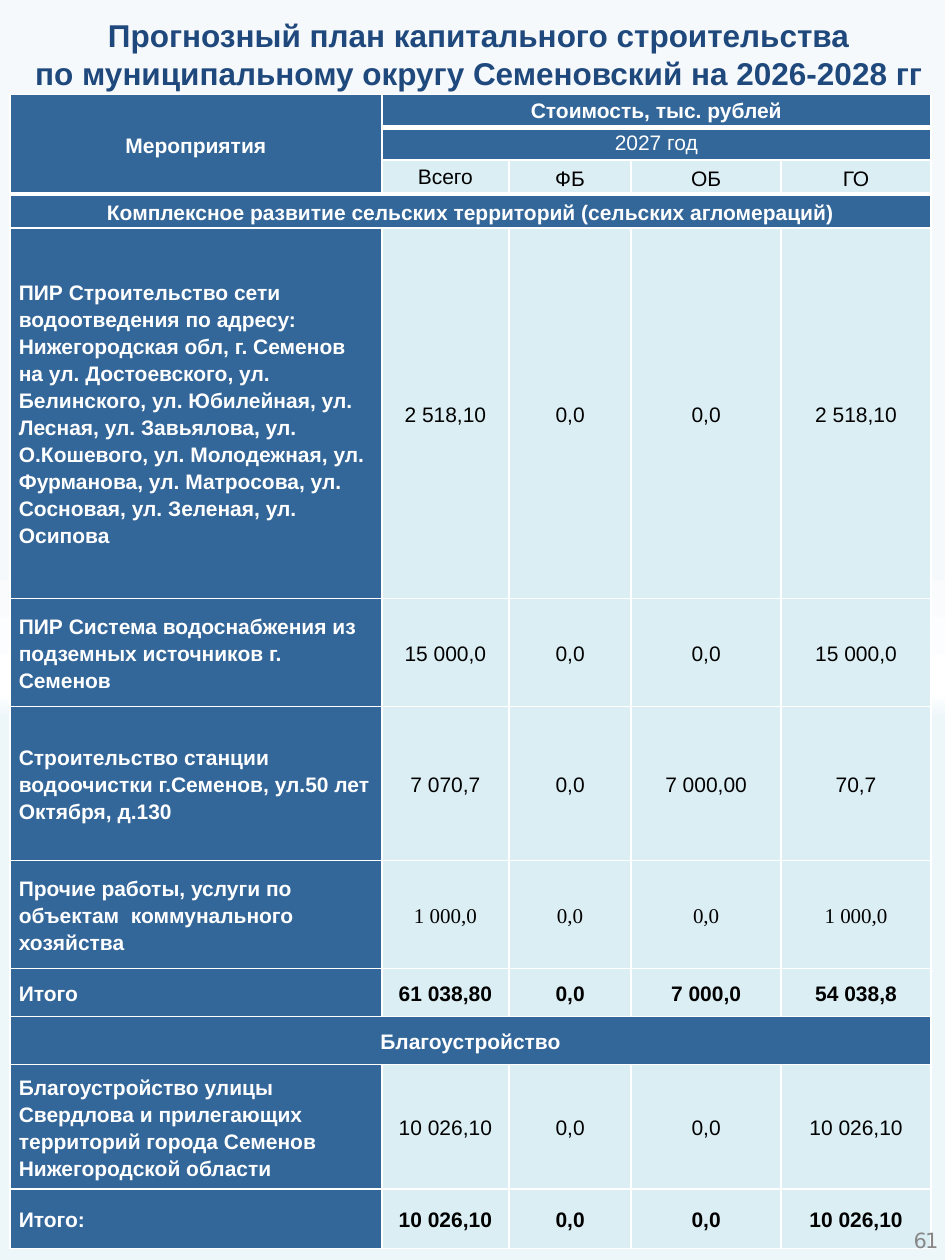
from lxml import etree
from pptx import Presentation
from pptx.dml.color import RGBColor
from pptx.enum.text import MSO_ANCHOR, PP_ALIGN
from pptx.oxml.ns import qn
from pptx.util import Inches, Pt

LEFT, CENTER = PP_ALIGN.LEFT, PP_ALIGN.CENTER
MIDDLE = MSO_ANCHOR.MIDDLE

COLORS = {
    "blue": "336699", "pale": "DBEEF4", "white": "FFFFFF",
    "black": "000000", "title": "1F497D", "number": "888888",
}
BACKGROUND_STOPS = [(21, "F6F9FC"), (43, "F6F9FC"), (55, "FFFFFF"),
                    (57, "EDF6F9"), (63, "EDF6F9"), (95, "EDF6F9")]

TITLE = ["Прогнозный план капитального строительства",
         "по муниципальному округу Семеновский на 2026-2028 гг"]
COLUMN_WIDTHS = [2.95, 1.01, 0.97, 1.19, 1.19]
ROW_HEIGHTS = [0.26, 0.26, 0.27, 0.27, 2.94, 0.86,
               1.22, 0.86, 0.38, 0.38, 0.99, 0.47]
THICK_BELOW = (0, 2)  # header rows closed by a heavy line
SOURCES = ["Всего", "ФБ", "ОБ", "ГО"]
SECTIONS = {3: "Комплексное развитие сельских территорий (сельских агломераций)",
            9: "Благоустройство"}
TOTAL_ROWS = (8, 11)
SERIF_ROW = 7
WORKS = {
    4: ["ПИР Строительство сети водоотведения по адресу: Нижегородская обл, "
        "г. Семенов на ул. Достоевского, ул. Белинского, ул. Юбилейная, "
        "ул. Лесная, ул. Завьялова, ул. О.Кошевого, ул. Молодежная, "
        "ул. Фурманова, ул. Матросова, ул. Сосновая, ул. Зеленая, ул. Осипова",
        "2 518,10", "0,0", "0,0", "2 518,10"],
    5: ["ПИР Система водоснабжения из подземных источников г. Семенов",
        "15 000,0", "0,0", "0,0", "15 000,0"],
    6: ["Строительство станции водоочистки г.Семенов, ул.50 лет Октября, д.130",
        "7 070,7", "0,0", "7 000,00", "70,7"],
    7: ["Прочие работы, услуги по объектам  коммунального хозяйства",
        "1 000,0", "0,0", "0,0", "1 000,0"],
    8: ["Итого", "61 038,80", "0,0", "7 000,0", "54 038,8"],
    10: ["Благоустройство улицы Свердлова и прилегающих территорий "
         "города Семенов Нижегородской области",
         "10 026,10", "0,0", "0,0", "10 026,10"],
    11: ["Итого:", "10 026,10", "0,0", "0,0", "10 026,10"],
}


def rgb(name):
    return RGBColor.from_string(COLORS[name])


def style_font(para, size, color, bold=False, name="Arial"):
    font = para.font
    font.name, font.size, font.bold = name, Pt(size), bold
    font.color.rgb = rgb(color)


def paint_background(page):
    fill = page.background.fill
    fill.gradient()
    fill.gradient_angle = 270
    stops = page._element.find(".//" + qn("a:gsLst"))
    for stop in list(stops):
        stops.remove(stop)
    for percent, color in BACKGROUND_STOPS:
        stop = etree.SubElement(stops, qn("a:gs"), pos=str(percent * 1000))
        etree.SubElement(stop, qn("a:srgbClr"), val=color)


def add_text_box(page, left, top, width, height):
    box = page.shapes.add_textbox(Inches(left), Inches(top),
                                  Inches(width), Inches(height))
    box.text_frame.word_wrap = True
    return box


def add_title(page):
    frame = add_text_box(page, -0.39, 0.08, 7.89, 0.71).text_frame
    for index, line in enumerate(TITLE):
        para = frame.paragraphs[0] if index == 0 else frame.add_paragraph()
        para.text = line
        para.alignment = CENTER
        para._p.get_or_add_pPr().set("indent", str(Inches(0.49)))
        style_font(para, 18, "title", bold=True)


def add_page_number(page):
    frame = add_text_box(page, 7.25, 9.74, 0.25, 0.23).text_frame
    frame.margin_left = frame.margin_right = 0
    frame.margin_top = frame.margin_bottom = 0
    para = frame.paragraphs[0]
    span = para.add_run()
    span.text = "61"
    span._r.get_or_add_rPr().set("spc", "-100")
    style_font(para, 12, "number", name="DejaVu Sans")


def set_borders(cell, row):
    widths = {"L": 1, "R": 1,
              "T": 3 if row - 1 in THICK_BELOW else 1,
              "B": 3 if row in THICK_BELOW else 1}
    properties = cell._tc.get_or_add_tcPr()
    for side, width in widths.items():
        line = etree.SubElement(properties, qn("a:ln" + side), w=str(Pt(width)))
        fill = etree.SubElement(line, qn("a:solidFill"))
        etree.SubElement(fill, qn("a:srgbClr"), val=COLORS["white"])


def fill_cell(cell, text, fill="blue", color="white", bold=True, align=CENTER,
              margin=0.07, spacing=1.15, name="Arial"):
    cell.fill.solid()
    cell.fill.fore_color.rgb = rgb(fill)
    cell.vertical_anchor = MIDDLE
    cell.margin_left = cell.margin_right = Inches(margin)
    cell.margin_top = cell.margin_bottom = 0
    para = cell.text_frame.paragraphs[0]
    para.text = text
    para.alignment = align
    if spacing:
        para.line_spacing = spacing
        para.space_after = Pt(10)
    style_font(para, 12, color, bold, name)


def add_plan_table(page):
    frame = page.shapes.add_table(
        len(ROW_HEIGHTS), len(COLUMN_WIDTHS), Inches(0.08), Inches(0.75),
        Inches(sum(COLUMN_WIDTHS)), Inches(sum(ROW_HEIGHTS)))
    table = frame.table
    table.first_row = table.horz_banding = False
    for column, width in zip(table.columns, COLUMN_WIDTHS):
        column.width = Inches(width)
    for index, height in enumerate(ROW_HEIGHTS):
        table.rows[index].height = Inches(height)
        for cell in table.rows[index].cells:
            set_borders(cell, index)

    # Header
    table.cell(0, 0).merge(table.cell(2, 0))
    fill_cell(table.cell(0, 0), "Мероприятия", margin=0.03)
    for row, text in enumerate(["Стоимость, тыс. рублей", "2027 год"]):
        table.cell(row, 1).merge(table.cell(row, 4))
        fill_cell(table.cell(row, 1), text, bold=row == 0,
                  margin=0.03, spacing=None)
    for column, text in enumerate(SOURCES, 1):
        fill_cell(table.cell(2, column), text, "pale", "black", bold=False,
                  margin=0.03, spacing=None if column == 1 else 1.15)

    # Section bands
    for row, text in SECTIONS.items():
        table.cell(row, 0).merge(table.cell(row, 4))
        fill_cell(table.cell(row, 0), text)

    # Works and totals
    for row, (work, *costs) in WORKS.items():
        fill_cell(table.cell(row, 0), work, align=LEFT)
        for column, cost in enumerate(costs, 1):
            fill_cell(table.cell(row, column), cost, "pale", "black",
                      bold=row in TOTAL_ROWS,
                      name="Times New Roman" if row == SERIF_ROW else "Arial")


def main():
    deck = Presentation()
    deck.slide_width, deck.slide_height = Inches(7.5), Inches(10)
    page = deck.slides.add_slide(deck.slide_layouts[6])
    paint_background(page)
    add_plan_table(page)
    add_page_number(page)
    add_title(page)
    deck.save("out.pptx")


if __name__ == "__main__":
    main()
